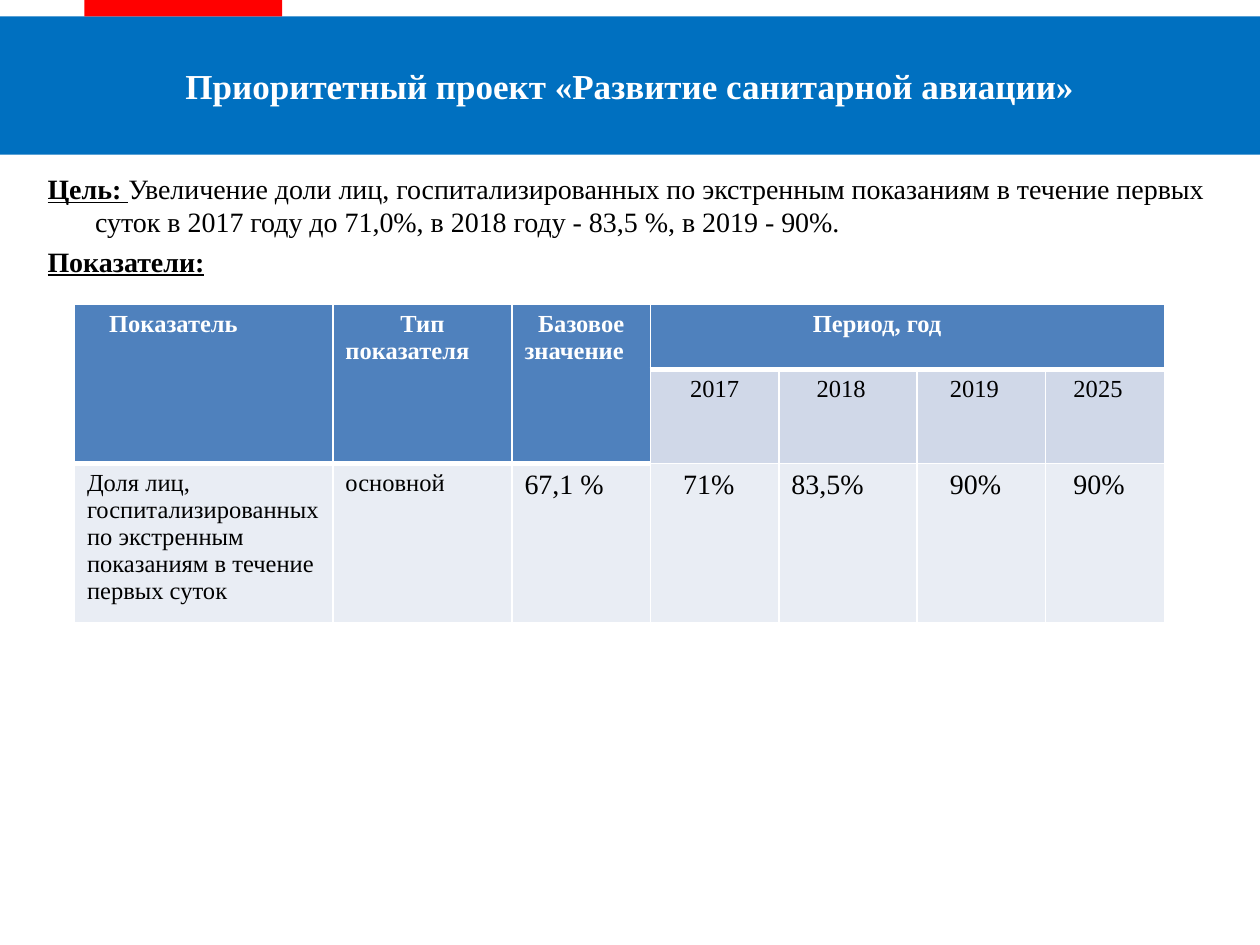
from dataclasses import dataclass

from lxml import etree
from pptx import Presentation
from pptx import util as u
from pptx.dml.color import RGBColor
from pptx.enum import shapes, text
from pptx.oxml.ns import qn


@dataclass(frozen=True)
class Theme:
    """Hold the colours, the font and the type sizes."""
    font: str = "Times New Roman"
    white: str = "FFFFFF"
    black: str = "000000"
    band: str = "0070C0"
    mark: str = "FF0000"
    head: str = "4F81BD"
    years: str = "D0D8E8"
    row: str = "E9EDF4"
    title: int = 20
    body: int = 16
    small: int = 14


THEME = Theme()
MID = text.PP_ALIGN.CENTER
LEFT = text.PP_ALIGN.LEFT
WIDTHS = (5.21, 3.61, 2.79, 2.59, 2.79, 2.59, 2.39)
HEIGHTS = (1.31, 1.89, 2.97)
HEADS = ("Показатель \t", "Тип показателя \t", "Базовое значение \t", "Период, год \t")
YEARS = ("2017", "2018 \t", "2019 \t", "2025 \t")
NAMES = ("Доля лиц, госпитализированных по экстренным показаниям в течение первых суток",
         "основной")
VALUES = ("67,1 % \t", "71% \t", "83,5% \t", "90% \t", "90% \t")
GOAL = ("Увеличение доли лиц, госпитализированных по экстренным показаниям "
        "в течение первых суток в 2017 году до 71,0%, в 2018 году - 83,5 %, в 2019 - 90%.")


def style(font, size, color, bold=False):
    """Set the face, size, colour and weight of a font."""
    font.name, font.size, font.bold = THEME.font, u.Pt(size), bold
    font.color.rgb = RGBColor.from_string(color)


def add_bar(slide, box, color):
    """Add a plain filled rectangle."""
    bar = slide.shapes.add_shape(shapes.MSO_SHAPE.RECTANGLE, *map(u.Cm, box))
    bar.shadow.inherit = False
    bar.fill.solid()
    bar.fill.fore_color.rgb = RGBColor.from_string(color)
    bar.line.fill.background()
    return bar


def add_title(slide, words):
    """Add the title band."""
    frame = add_bar(slide, (0, 0.33, 25.4, 2.79), THEME.band).text_frame
    frame.vertical_anchor = text.MSO_ANCHOR.MIDDLE
    para = frame.paragraphs[0]
    para.text, para.alignment = words, MID
    style(para.font, THEME.title, THEME.white, True)


def add_point(para, label, words=""):
    """Write an underlined label and its words with a hanging indent."""
    props = para._p.get_or_add_pPr()
    props.set("marL", str(u.Cm(0.96)))
    props.set("indent", str(-u.Cm(0.96)))
    para.space_before = u.Pt(0.2 * THEME.body)
    style(para.font, THEME.body, THEME.black)
    run = para.add_run()
    run.text = label
    style(run.font, THEME.body, THEME.black, True)
    run.font.underline = True
    if words:
        run = para.add_run()
        run.text = words
        style(run.font, THEME.body, THEME.black)


def add_goal(slide):
    """Add the goal and the label of the table."""
    box = slide.shapes.add_textbox(*map(u.Cm, (0.71, 3.33, 24.41, 2.5)))
    frame = box.text_frame
    frame.word_wrap = True
    add_point(frame.paragraphs[0], "Цель: ", GOAL)
    add_point(frame.add_paragraph(), "Показатели:")


def set_edges(cell, base):
    """Draw white cell borders with the given bottom width."""
    props = cell._tc.get_or_add_tcPr()
    for side, width in (("L", 1), ("R", 1), ("T", 1), ("B", base)):
        line = etree.SubElement(props, qn(f"a:ln{side}"), w=str(u.Pt(width)))
        fill = etree.SubElement(line, qn("a:solidFill"))
        etree.SubElement(fill, qn("a:srgbClr"), val=THEME.white)


def paint(cell, color, base=1):
    """Set the borders and the fill of a cell."""
    set_edges(cell, base)
    cell.fill.solid()
    cell.fill.fore_color.rgb = RGBColor.from_string(color)


def write(cell, words, size, color=THEME.black, bold=False, align=MID):
    """Write one paragraph into a cell."""
    para = cell.text_frame.paragraphs[0]
    para.text, para.alignment = words, align
    style(para.font, size, color, bold)


def add_grid(slide):
    """Add the table of indicators."""
    place = (1.5, 6.14, sum(WIDTHS), sum(HEIGHTS))
    grid = slide.shapes.add_table(len(HEIGHTS), len(WIDTHS), *map(u.Cm, place)).table
    for col, width in zip(grid.columns, WIDTHS):
        col.width = u.Cm(width)
    for row, height in zip(grid.rows, HEIGHTS):
        row.height = u.Cm(height)
    for col in range(len(WIDTHS)):
        paint(grid.cell(0, col), THEME.head, 3)
        if col < 3:
            paint(grid.cell(1, col), THEME.head, 3)
            grid.cell(0, col).merge(grid.cell(1, col))
        else:
            paint(grid.cell(1, col), THEME.years)
        paint(grid.cell(2, col), THEME.row)
    grid.cell(0, 3).merge(grid.cell(0, 6))
    for col, words in enumerate(HEADS):
        write(grid.cell(0, col), words, THEME.small, THEME.white, True)
    for col, words in enumerate(YEARS, 3):
        write(grid.cell(1, col), words, THEME.small)
    for col, words in enumerate(NAMES):
        write(grid.cell(2, col), words, THEME.small, align=LEFT)
    for col, words in enumerate(VALUES, 2):
        write(grid.cell(2, col), words, THEME.body)


def main():
    """Build the slide and save it."""
    deck = Presentation()
    deck.slide_width, deck.slide_height = u.Cm(25.4), u.Cm(19.05)
    slide = deck.slides.add_slide(deck.slide_layouts[6])
    add_title(slide, "Приоритетный проект «Развитие санитарной авиации»")
    add_bar(slide, (1.7, 0, 3.99, 0.33), THEME.mark)
    add_goal(slide)
    add_grid(slide)
    deck.save("out.pptx")


if __name__ == "__main__":
    main()
